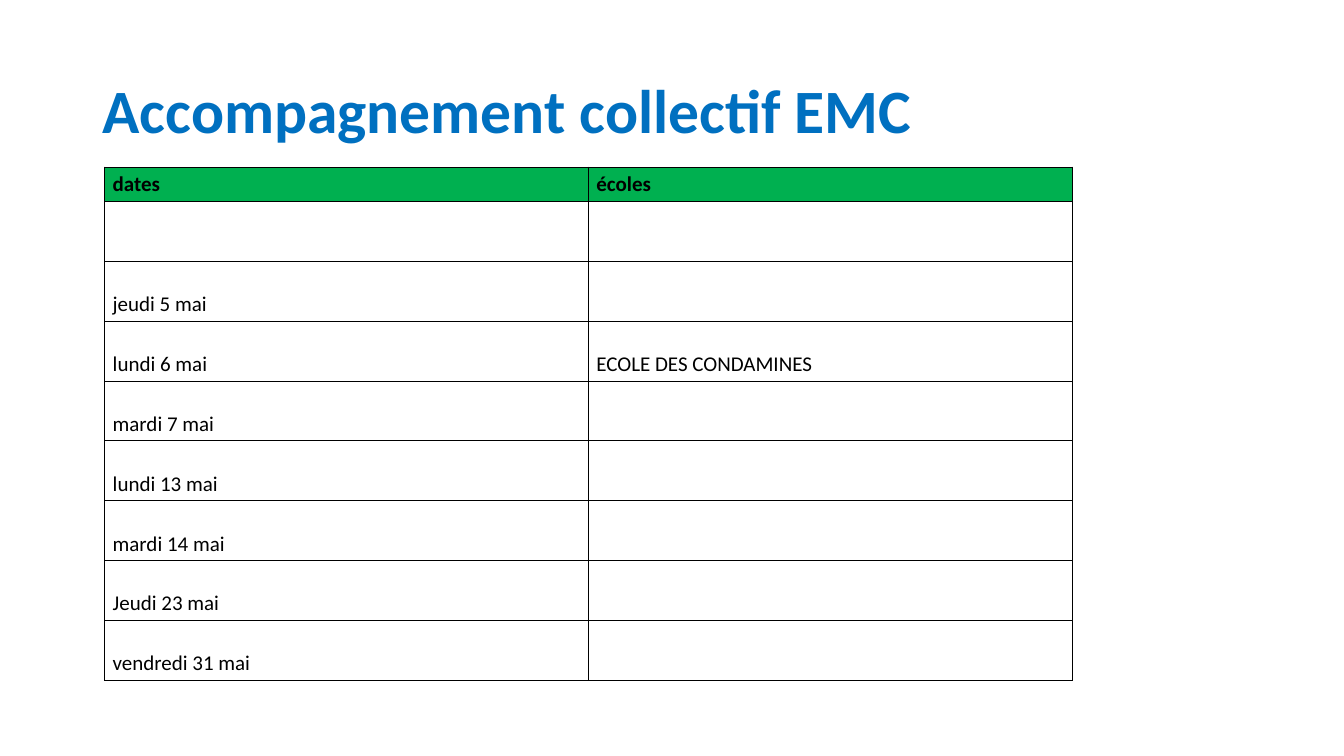
from lxml.etree import SubElement
from pptx import Presentation
from pptx.dml.color import RGBColor
from pptx.enum.text import MSO_ANCHOR as Anchor, MSO_AUTO_SIZE as AutoSize, PP_ALIGN as Align
from pptx.oxml.ns import qn
from pptx.util import Cm, Pt

COLORS = {"title": "0070C0", "header": "00B050", "text": "000000", "border": "000000"}
FONT = "Calibri"
SCHEDULE = [
    ("dates", "écoles"),
    ("", ""),
    ("jeudi 5 mai", ""),
    ("lundi 6 mai", "ECOLE DES CONDAMINES"),
    ("mardi 7 mai", ""),
    ("lundi 13 mai", ""),
    ("mardi 14 mai", ""),
    ("Jeudi 23 mai", ""),
    ("vendredi 31 mai", ""),
]


class SlideBuilder:
    """Adds consistently styled elements to one slide."""

    def __init__(self, slide):
        """Keep the slide being built."""
        self.slide = slide

    def format_runs(self, paragraph, size, color, bold):
        """Apply the font to every run of a paragraph."""
        for run in paragraph.runs:
            run.font.name = FONT
            run.font.size = Pt(size)
            run.font.bold = bold
            run.font.color.rgb = RGBColor.from_string(COLORS[color])

    def add_title(self, text, left, top, width, height):
        """Fill and place the title placeholder."""
        title = self.slide.shapes.title
        title.left, title.top, title.width, title.height = left, top, width, height
        text_frame = title.text_frame
        text_frame.text = text
        text_frame.auto_size = AutoSize.NONE
        text_frame.vertical_anchor = Anchor.MIDDLE
        paragraph = text_frame.paragraphs[0]
        paragraph.alignment = Align.LEFT
        paragraph.line_spacing = 0.9
        self.format_runs(paragraph, 44, "title", True)

    def add_borders(self, cell):
        """Draw a thin line on the four sides of a cell."""
        properties = cell._tc.get_or_add_tcPr()
        for position, side in enumerate(("lnL", "lnR", "lnT", "lnB")):
            line = SubElement(properties, qn(f"a:{side}"), w=str(Pt(0.75)))
            fill = SubElement(line, qn("a:solidFill"))
            SubElement(fill, qn("a:srgbClr"), val=COLORS["border"])
            properties.insert(position, line)

    def format_cell(self, cell, text, is_header):
        """Write one cell and set its fill, margins and borders."""
        cell.text = text
        cell.vertical_anchor = Anchor.BOTTOM
        cell.margin_left = cell.margin_right = Cm(0.2)
        cell.margin_top = cell.margin_bottom = Cm(0.1)
        if is_header:
            cell.fill.solid()
            cell.fill.fore_color.rgb = RGBColor.from_string(COLORS["header"])
        else:
            cell.fill.background()
        self.format_runs(cell.text_frame.paragraphs[0], 15, "text", is_header)
        self.add_borders(cell)

    def add_table(self, rows, left, top, width, header_height, row_height):
        """Add a table with a header row and equal columns."""
        height = header_height + row_height * (len(rows) - 1)
        frame = self.slide.shapes.add_table(len(rows), len(rows[0]), left, top, width, height)
        table = frame.table
        table.first_row = table.horz_banding = False
        for row_index, texts in enumerate(rows):
            is_header = row_index == 0
            table.rows[row_index].height = header_height if is_header else row_height
            for column_index, text in enumerate(texts):
                self.format_cell(table.cell(row_index, column_index), text, is_header)


def main():
    """Build and save the presentation."""
    presentation = Presentation()
    presentation.slide_width, presentation.slide_height = Cm(33.87), Cm(19.05)
    slide = presentation.slides.add_slide(presentation.slide_layouts[5])
    builder = SlideBuilder(slide)
    builder.add_title("Accompagnement collectif EMC", Cm(2.33), Cm(1.01), Cm(29.21), Cm(3.68))
    builder.add_table(SCHEDULE, Cm(2.64), Cm(4.21), Cm(24.38), Cm(0.86), Cm(1.51))
    presentation.save("out.pptx")


if __name__ == "__main__":
    main()
